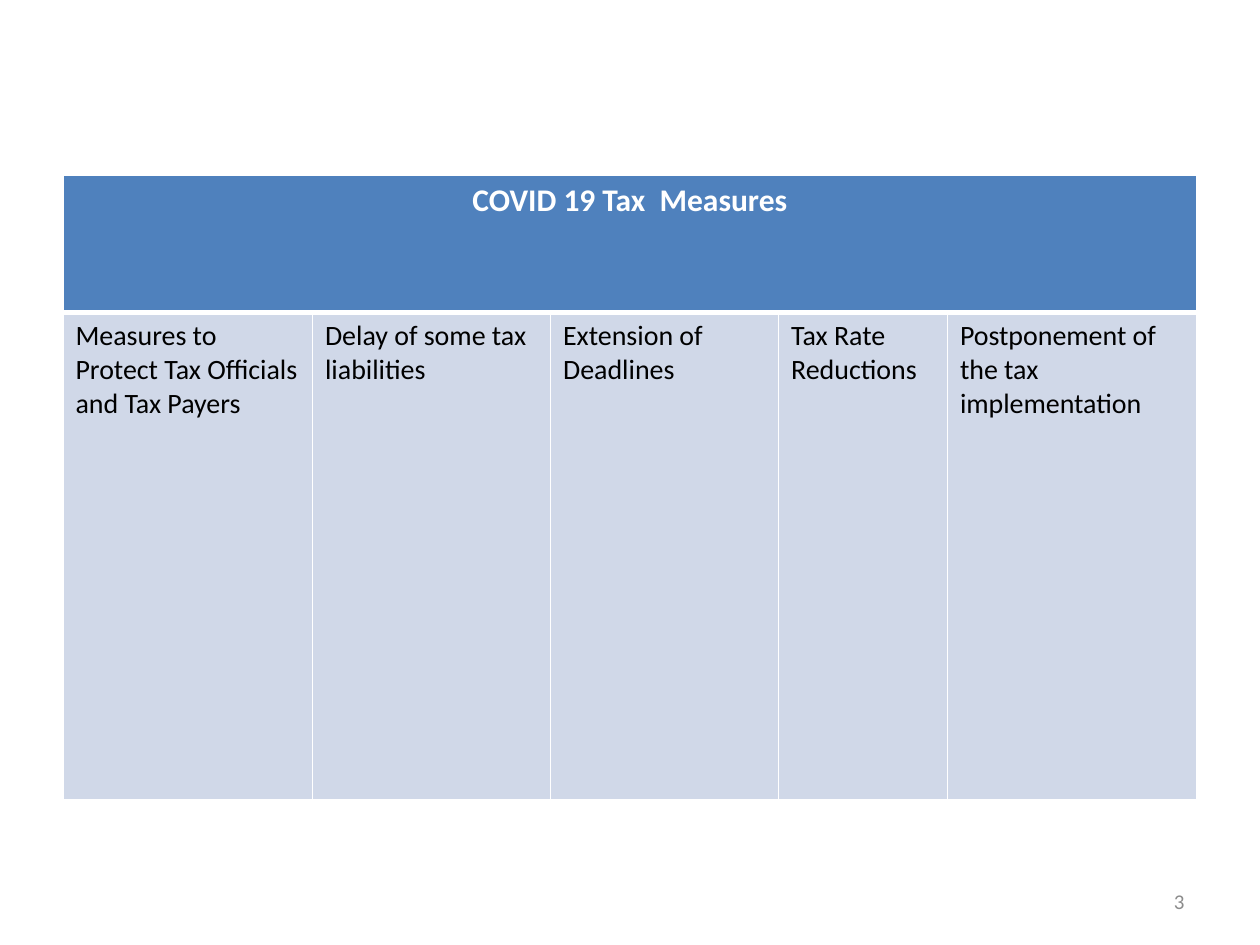
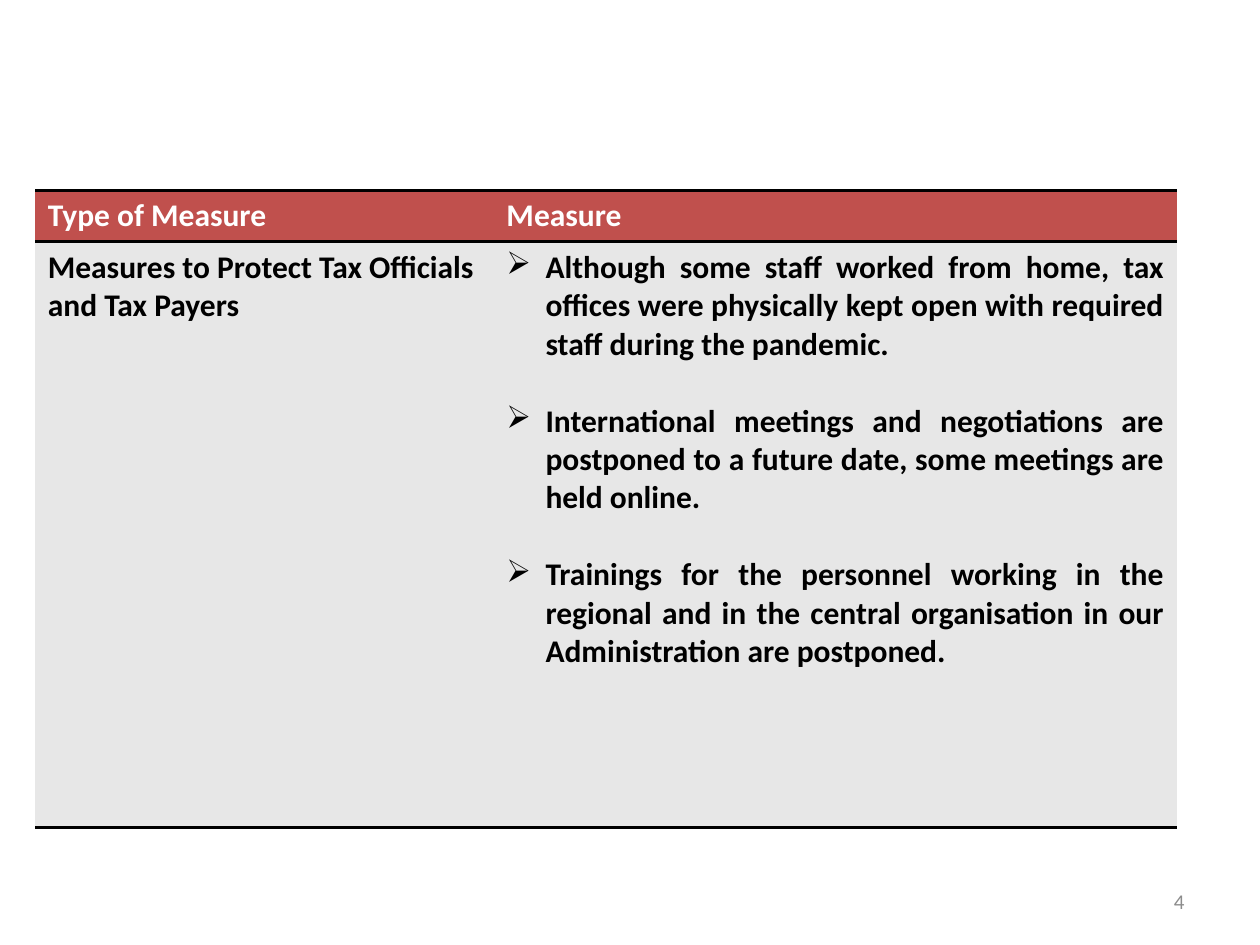
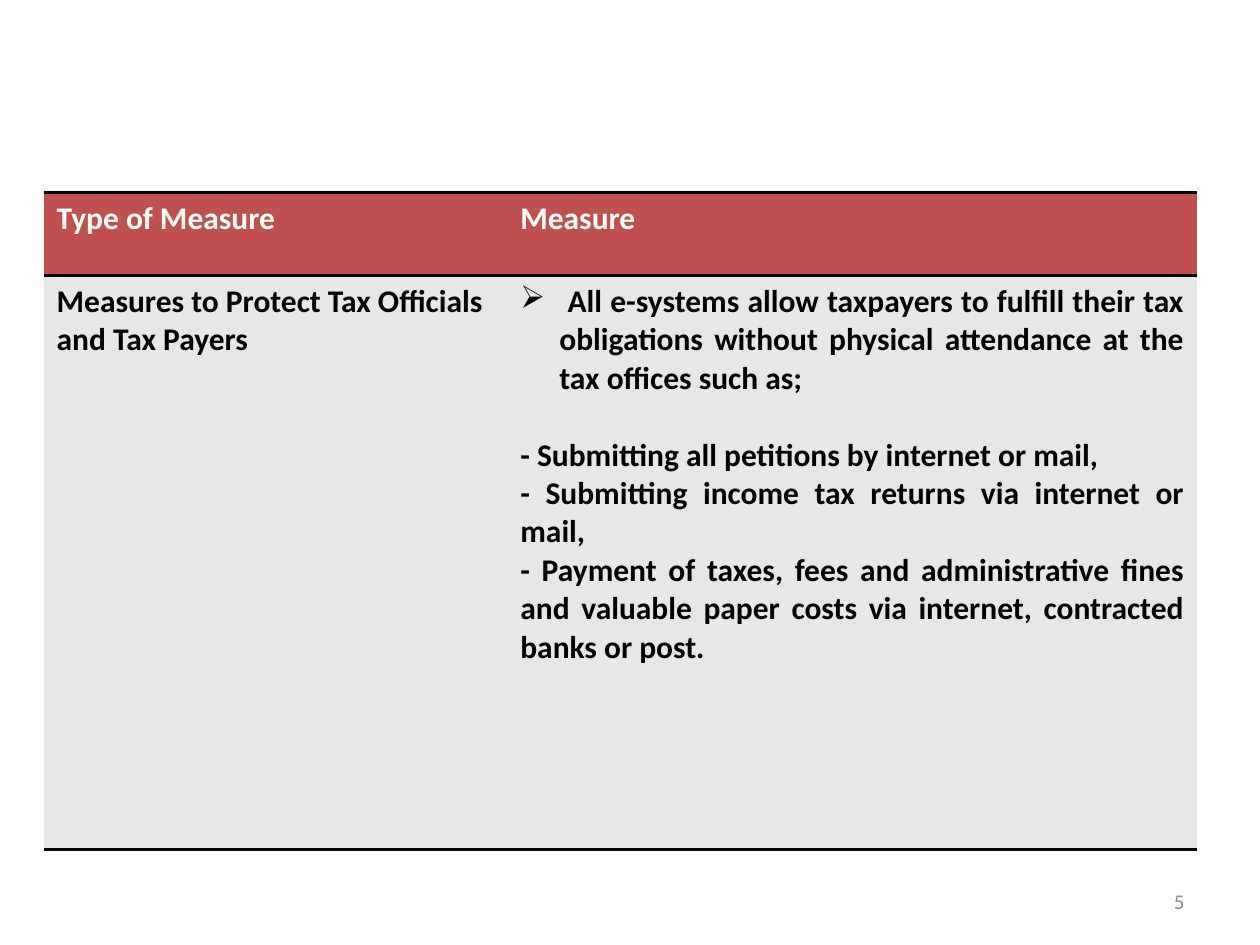
"""Build three slides of tables on COVID 19 tax measures."""
from lxml.etree import SubElement
from pptx import Presentation
from pptx.dml.color import RGBColor
from pptx.enum.text import MSO_ANCHOR, PP_ALIGN
from pptx.oxml import parse_xml
from pptx.oxml.ns import nsdecls, qn
from pptx.util import Inches, Pt

WHITE = RGBColor(0xFF, 0xFF, 0xFF)
BLACK = RGBColor(0x00, 0x00, 0x00)
BLUE = RGBColor(0x4F, 0x81, 0xBD)
PALE_BLUE = RGBColor(0xD0, 0xD8, 0xE8)
RED = RGBColor(0xC0, 0x50, 0x4D)
PALE_GRAY = RGBColor(0xE7, 0xE7, 0xE7)
NUMBER_GRAY = RGBColor(0x8C, 0x8C, 0x8C)

FONT = "Calibri"
NO_STYLE = "{2D5ABB26-0587-4C30-8999-92F81FD0307C}"
INDENT = Inches(0.31)
EMPTY_LINE = 22
FIRST_NUMBER = 3

OVERVIEW = dict(
    heading_fill=BLUE, body_fill=PALE_BLUE, rule=WHITE,
    rule_widths=(1, 3, 1), divider_width=1, body_size=16, body_bold=False)
DETAIL = dict(
    heading_fill=RED, body_fill=PALE_GRAY, rule=BLACK,
    rule_widths=(2, 2, 2), divider_width=0, body_size=18, body_bold=True)

PROTECTION = "Measures to Protect Tax Officials and Tax Payers"
DETAIL_HEADINGS = ["Type of Measure", "Measure"]


def item(text, bullet=False, gap=0):
    return dict(text=text, bullet=bullet, space_before=gap, align=PP_ALIGN.JUSTIFY)


SLIDES = [
    dict(
        look=OVERVIEW, corner=(0.5, 1.39),
        columns=[1.98, 1.89, 1.81, 1.34, 1.98], rows=[1.09, 3.87],
        headings=["COVID 19 Tax  Measures"],
        body=[
            [dict(text=PROTECTION)],
            [dict(text="Delay of some tax liabilities")],
            [dict(text="Extension of Deadlines")],
            [dict(text="Tax Rate Reductions")],
            [dict(text="Postponement of the tax implementation")],
        ]),
    dict(
        look=DETAIL, corner=(0.28, 1.51),
        columns=[3.64, 5.42], rows=[0.41, 4.65],
        headings=DETAIL_HEADINGS,
        body=[
            [dict(text=PROTECTION)],
            [
                item("Although some staff worked from home, tax offices were physically "
                     "kept open with required staff during the pandemic.", bullet=True),
                item("International meetings and negotiations are postponed to a future "
                     "date, some meetings are held online.", bullet=True, gap=EMPTY_LINE),
                item("Trainings for the personnel working in the regional and in the "
                     "central organisation in our Administration are postponed.",
                     bullet=True, gap=EMPTY_LINE),
            ],
        ]),
    dict(
        look=DETAIL, corner=(0.35, 1.53),
        columns=[3.68, 5.47], rows=[0.66, 4.55],
        headings=DETAIL_HEADINGS,
        body=[
            [dict(text=PROTECTION)],
            [
                item(" All e-systems allow taxpayers to fulfill their tax obligations "
                     "without physical attendance at the tax offices such as;", bullet=True),
                item("- Submitting all petitions by internet or mail,", gap=EMPTY_LINE),
                item("- Submitting income tax returns via internet or mail,"),
                item("- Payment of taxes, fees and administrative fines and valuable "
                     "paper costs via internet, contracted banks or post."),
            ],
        ]),
]


def write(paragraph, text, size=18, color=BLACK, bold=False,
          align=PP_ALIGN.LEFT, bullet=False, space_before=0):
    if bullet:
        properties = paragraph._p.get_or_add_pPr()
        properties.set("marL", str(INDENT))
        properties.set("indent", str(-INDENT))
        SubElement(properties, qn("a:buChar")).set("char", "➢")
    paragraph.alignment = align
    if space_before:
        paragraph.space_before = Pt(space_before)
    run = paragraph.add_run()
    run.text = text
    run.font.name = FONT
    run.font.size = Pt(size)
    run.font.bold = bold
    run.font.color.rgb = color


def fill_cell(cell, fill, rule, widths):
    cell.fill.solid()
    cell.fill.fore_color.rgb = fill
    for place, (side, width) in enumerate(zip("LRTB", widths)):
        paint = f'<a:solidFill><a:srgbClr val="{rule}"/></a:solidFill>' if width else "<a:noFill/>"
        cell._tc.get_or_add_tcPr().insert(place, parse_xml(
            f'<a:ln{side} {nsdecls("a")} w="{Pt(width)}">{paint}</a:ln{side}>'))


def add_measures(slide, look, corner, columns, rows, headings, body):
    left, top = map(Inches, corner)
    frame = slide.shapes.add_table(
        len(rows), len(columns), left, top, Inches(sum(columns)), Inches(sum(rows)))
    measures = frame.table
    measures._tbl.tblPr.find(qn("a:tableStyleId")).text = NO_STYLE
    for column, width in zip(measures.columns, columns):
        column.width = Inches(width)
    for row, height in zip(measures.rows, rows):
        row.height = Inches(height)

    divider = look["divider_width"]
    for index, fill in enumerate((look["heading_fill"], look["body_fill"])):
        widths = (divider, divider, *look["rule_widths"][index:index + 2])
        for cell in measures.rows[index].cells:
            fill_cell(cell, fill, look["rule"], widths)

    spanning = len(headings) == 1
    if spanning:
        measures.cell(0, 0).merge(measures.cell(0, len(columns) - 1))
    for index, heading in enumerate(headings):
        write(measures.cell(0, index).text_frame.paragraphs[0], heading, color=WHITE,
              bold=True, align=PP_ALIGN.CENTER if spanning else PP_ALIGN.LEFT)
    for index, entries in enumerate(body):
        text_frame = measures.cell(1, index).text_frame
        for order, entry in enumerate(entries):
            paragraph = text_frame.add_paragraph() if order else text_frame.paragraphs[0]
            write(paragraph, size=look["body_size"], bold=look["body_bold"], **entry)


def add_number(slide, number):
    box = slide.shapes.add_textbox(Inches(7.17), Inches(6.95), Inches(2.33), Inches(0.4))
    box.text_frame.word_wrap = True
    box.text_frame.vertical_anchor = MSO_ANCHOR.MIDDLE
    write(box.text_frame.paragraphs[0], str(number), size=12,
          color=NUMBER_GRAY, align=PP_ALIGN.RIGHT)


def main():
    deck = Presentation()
    deck.slide_width, deck.slide_height = Inches(10), Inches(7.5)
    for number, content in enumerate(SLIDES, FIRST_NUMBER):
        slide = deck.slides.add_slide(deck.slide_layouts[6])
        add_measures(slide, **content)
        add_number(slide, number)
    deck.save("out.pptx")


if __name__ == "__main__":
    main()
